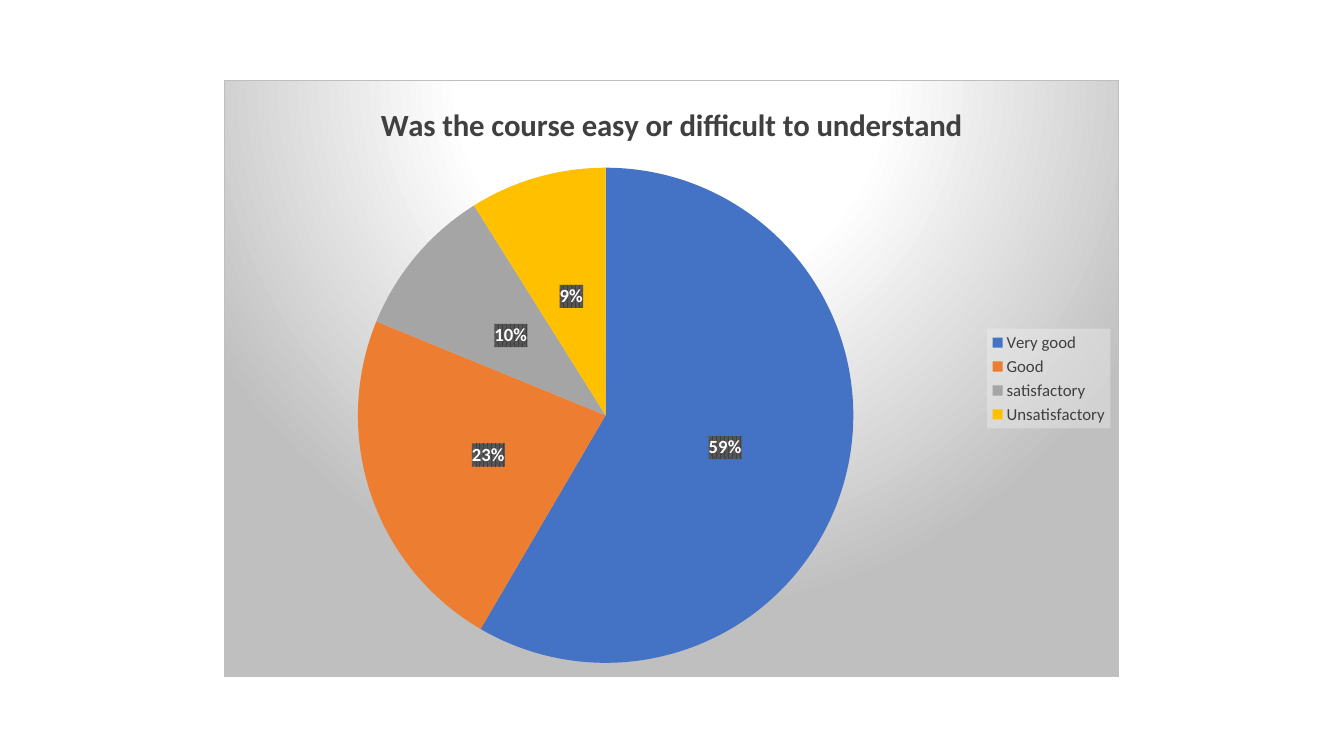
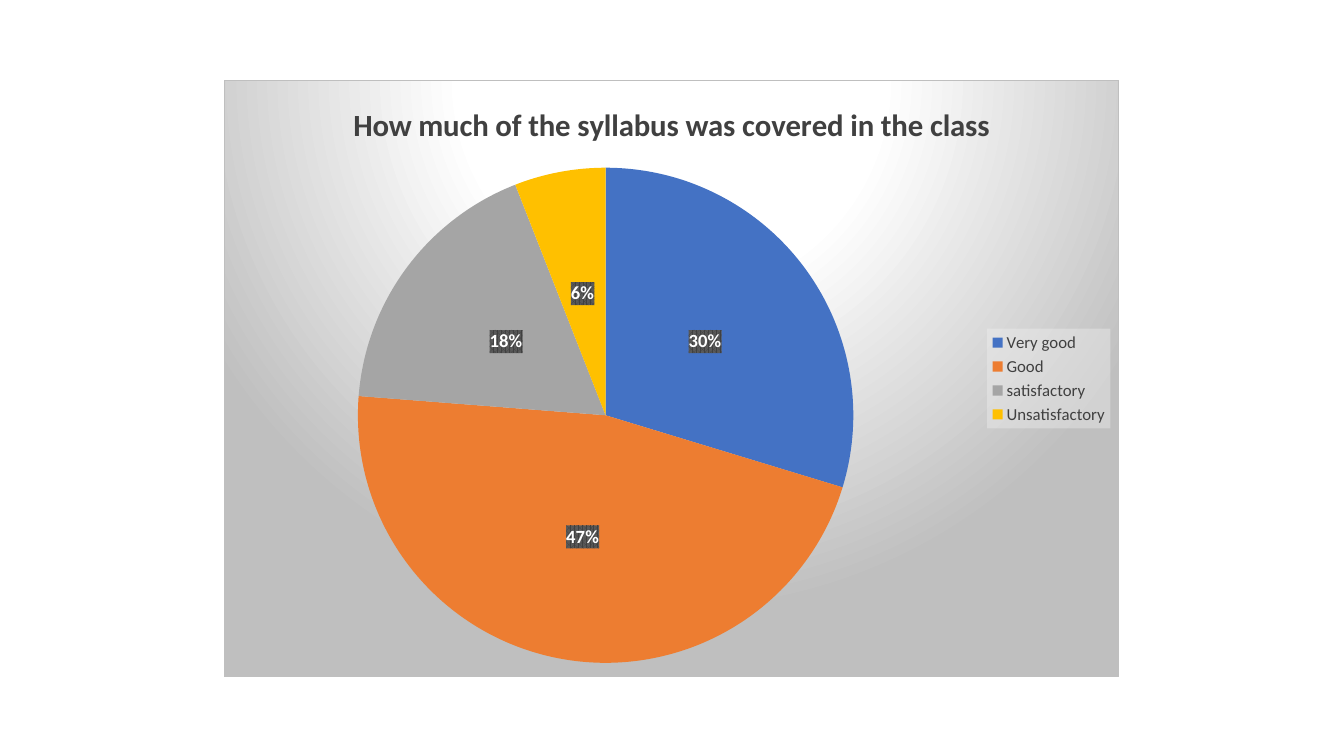
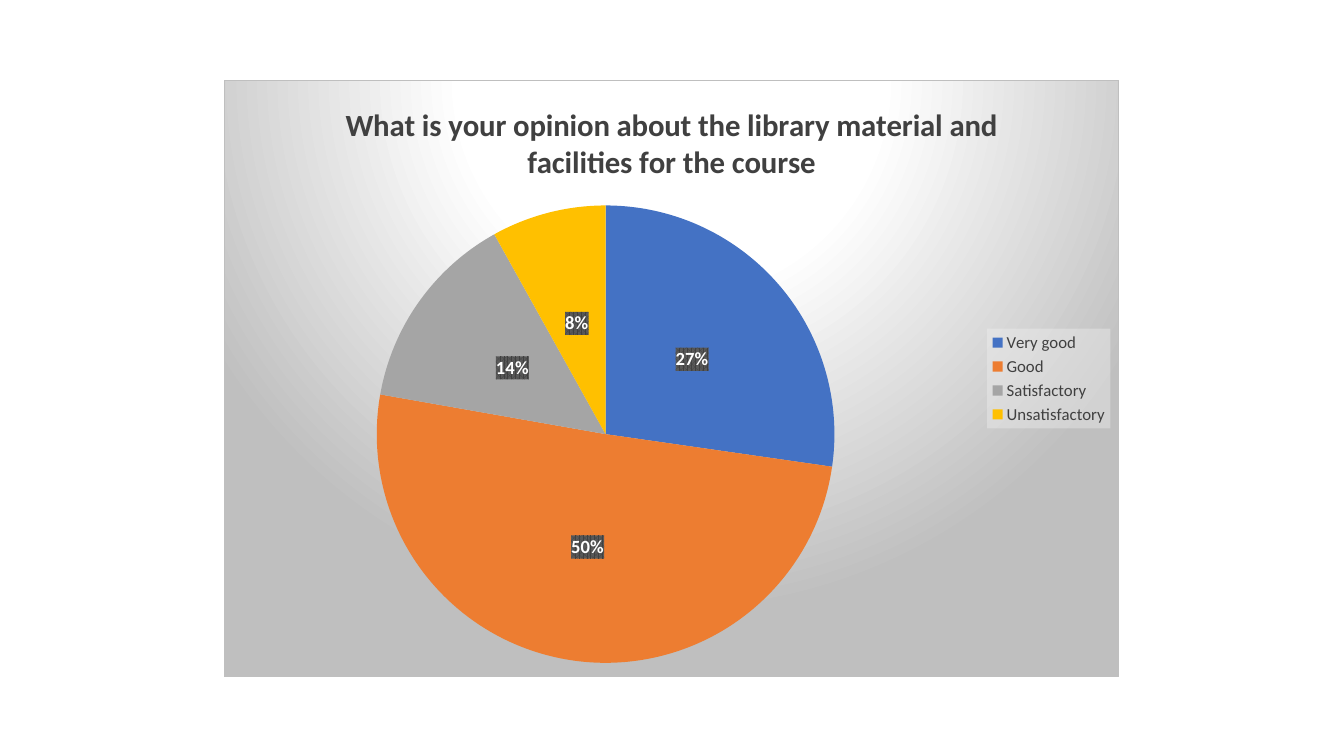
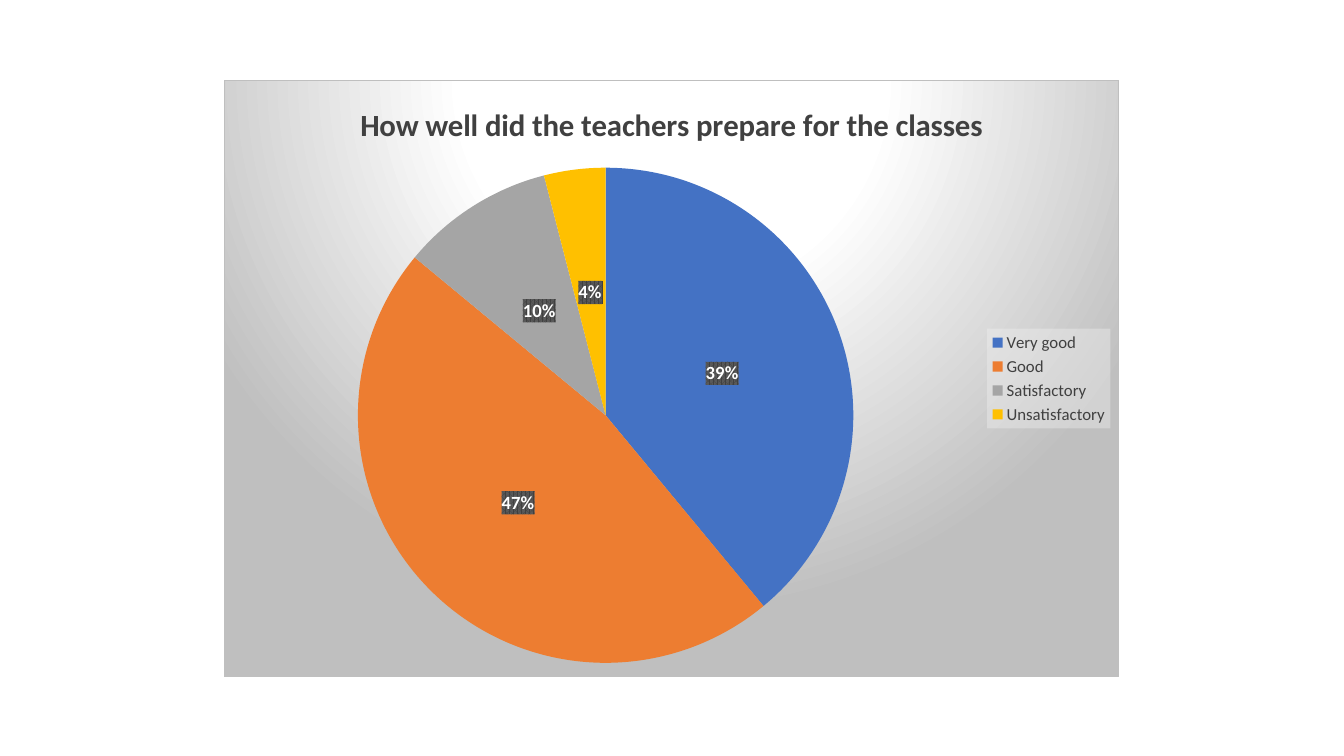
from pptx import Presentation, util as u
from pptx.chart.data import CategoryChartData
from pptx.dml.color import RGBColor
from pptx.enum import chart as charts
from pptx.oxml import parse_xml
from pptx.oxml.ns import nsdecls

PX = 9525
COLOURS = {
    "blue": "4472C4",
    "orange": "ED7D31",
    "grey": "A5A5A5",
    "yellow": "FFC000",
    "white": "FFFFFF",
    "edge": "BFBFBF",
    "text": "404040",
    "stripe": "595959",
    "legend": "F2F2F2",
}
SLICES = ("blue", "orange", "grey", "yellow")
FRAME = (213, 76, 853, 569)

SURVEY = [
    ("Was the course easy or difficult to understand", "satisfactory", (59, 23, 10, 9)),
    ("How much of the syllabus was covered in the class", "satisfactory", (30, 47, 18, 6)),
    ("What is your opinion about the library material and facilities for the course",
     "Satisfactory", (27, 50, 14, 8)),
    ("How well did the teachers prepare for the classes", "Satisfactory", (39, 47, 10, 4)),
]


def rgb(name):
    return RGBColor.from_string(COLOURS[name])


def colour_xml(name, alpha=100):
    return f'<a:srgbClr val="{COLOURS[name]}"><a:alpha val="{alpha * 1000}"/></a:srgbClr>'


def radial_fill(*stops):
    """Circular gradient centred above the chart; stops are (percent, colour)."""
    marks = "".join(f'<a:gs pos="{at * 1000}">{colour_xml(name)}</a:gs>' for at, name in stops)
    return (f'<a:gradFill flip="none" rotWithShape="1"><a:gsLst>{marks}</a:gsLst>'
            '<a:path path="circle">'
            '<a:fillToRect l="50000" t="-80000" r="50000" b="180000"/>'
            '</a:path><a:tileRect/></a:gradFill>')


def solid_fill(name, alpha=100):
    return f"<a:solidFill>{colour_xml(name, alpha)}</a:solidFill>"


def pattern_fill(front, back):
    return (f'<a:pattFill prst="pct75"><a:fgClr>{colour_xml(front)}</a:fgClr>'
            f"<a:bgClr>{colour_xml(back)}</a:bgClr></a:pattFill>")


def style_box(chart, query, fill, line="<a:ln><a:noFill/></a:ln>"):
    """Put a fill and line just before the text properties found by query."""
    box = parse_xml(f'<c:spPr {nsdecls("c", "a")}>{fill}{line}</c:spPr>')
    chart.element.xpath(query)[0].addprevious(box)


def set_font(font, size, colour="text", bold=False):
    font.name = "Calibri"
    font.size = u.Pt(size)
    font.bold = bold
    font.color.rgb = rgb(colour)


def write(frame, content, **style):
    frame.text = content
    set_font(frame.paragraphs[0].runs[0].font, **style)


class Deck:
    def __init__(self):
        self.presentation = Presentation()
        self.presentation.slide_width = 1280 * PX
        self.presentation.slide_height = 720 * PX
        self.slide = None

    def add_slide(self):
        self.slide = self.presentation.slides.add_slide(self.presentation.slide_layouts[6])

    def pie(self, title, categories, values):
        data = CategoryChartData()
        data.categories = categories
        data.add_series(title, values)
        chart = self.slide.shapes.add_chart(
            charts.XL_CHART_TYPE.PIE, *(length * PX for length in FRAME), data).chart
        chart.font.name = "Calibri"
        chart.font.size = u.Pt(10)
        style_box(chart, "./c:txPr",
                  radial_fill((0, "white"), (39, "white"), (100, "edge")),
                  f'<a:ln w="9525">{solid_fill("edge")}</a:ln>')

        chart.has_title = True
        write(chart.chart_title.text_frame, title, size=22, bold=True)
        chart.chart_title.include_in_layout = False
        self.legend(chart)
        self.slices(chart)

    def legend(self, chart):
        chart.has_legend = True
        chart.legend.position = charts.XL_LEGEND_POSITION.RIGHT
        chart.legend.include_in_layout = False
        set_font(chart.legend.font, 12)
        style_box(chart, ".//c:legend/c:txPr", solid_fill("legend", alpha=39))

    def slices(self, chart):
        series = chart.plots[0].series[0]
        for index, name in enumerate(SLICES):
            point = series.points[index].format
            point.fill.solid()
            point.fill.fore_color.rgb = rgb(name)
            point.line.fill.background()

        labels = series.data_labels
        # The answers are already rounded percentages and need not add up to 100.
        labels.show_value = True
        labels.number_format = '0"%"'
        labels.number_format_is_linked = False
        labels.position = charts.XL_LABEL_POSITION.CENTER
        set_font(labels.font, 13.3, "white", bold=True)
        style_box(chart, ".//c:dLbls/c:txPr", pattern_fill("text", "stripe"))


def main():
    deck = Deck()
    for question, third_answer, shares in SURVEY:
        deck.add_slide()
        deck.pie(question, ("Very good", "Good", third_answer, "Unsatisfactory"), shares)
    deck.presentation.save("out.pptx")


if __name__ == "__main__":
    main()
